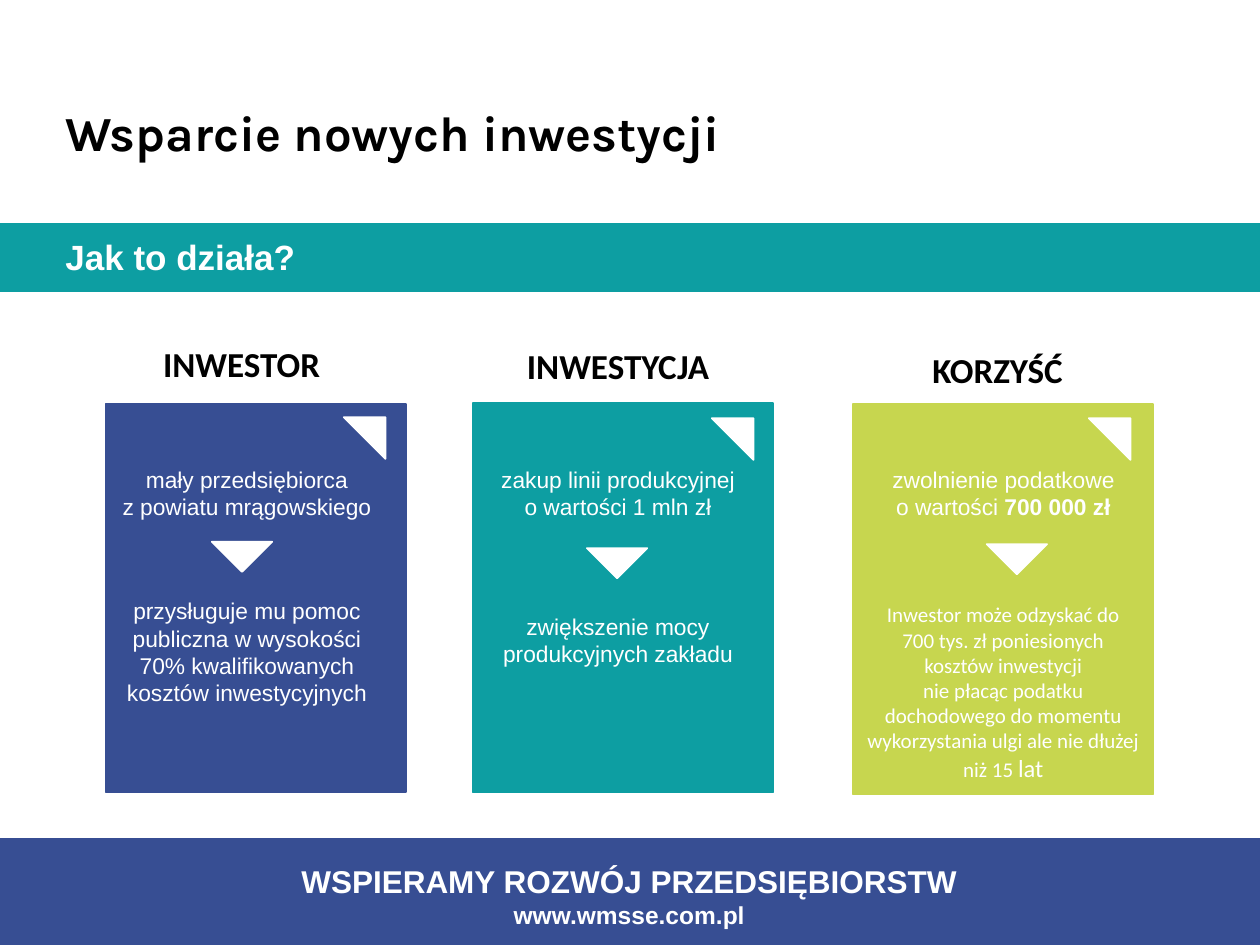
from dataclasses import dataclass

from pptx import Presentation
from pptx.dml.color import RGBColor
from pptx.enum.shapes import MSO_SHAPE
from pptx.enum.text import MSO_ANCHOR, PP_ALIGN
from pptx.util import Cm, Pt

TEAL = RGBColor(0x0D, 0x9E, 0xA2)
NAVY = RGBColor(0x37, 0x4E, 0x93)
LIME = RGBColor(0xC7, 0xD6, 0x4F)
WHITE = RGBColor(0xFF, 0xFF, 0xFF)
BLACK = RGBColor(0x00, 0x00, 0x00)

SLIDE_WIDTH, SLIDE_HEIGHT = 25.4, 19.05
PANEL_WIDTH = 6.05
HEADING_WIDTH = 7.04


@dataclass
class Column:
    heading: str
    heading_at: tuple
    colour: RGBColor
    panel_left: float
    panel_top: float
    panel_height: float
    text_left: float
    condition: list
    effect: list
    effect_top: float
    corner_at: tuple
    arrow_at: tuple
    effect_font: str = "Arial"
    effect_size: int = 13


COLUMNS = [
    Column("INWESTOR", (1.35, 6.78), NAVY, 2.13, 8.15, 7.82, 1.95,
           [["mały przedsiębiorca"], ["z powiatu mrągowskiego"]],
           [["przysługuje mu pomoc publiczna w wysokości 70% kwalifikowanych "
             "kosztów inwestycyjnych"]],
           11.91, (6.93, 8.41), (4.45, 10.49)),
    Column("INWESTYCJA", (8.94, 6.83), TEAL, 9.53, 8.13, 7.85, 9.43,
           [["zakup linii produkcyjnej"], ["o wartości 1 mln zł"]],
           [["zwiększenie mocy produkcyjnych zakładu"]],
           12.22, (14.35, 8.43), (12.01, 10.62)),
    Column("KORZYŚĆ", (16.59, 6.91), LIME, 17.2, 8.15, 7.87, 17.2,
           [["zwolnienie podatkowe"], ["o wartości ", "700 000 zł"]],
           [["Inwestor może odzyskać do"],
            ["700 tys. zł poniesionych kosztów inwestycji"],
            ["nie płacąc podatku dochodowego do momentu wykorzystania ulgi "
             "ale nie dłużej niż 15 ", "lat"]],
           12.01, (21.95, 8.43), (20.07, 10.54), "Calibri", 12),
]


class SlideBuilder:
    def __init__(self, slide):
        self.slide = slide

    def style(self, run, size, font, colour, bold=False):
        run.font.size = Pt(size)
        run.font.name = font
        run.font.bold = bold
        run.font.color.rgb = colour

    def title(self, wording, left, top, width, height):
        title = self.slide.shapes.title
        title.left, title.top = Cm(left), Cm(top)
        title.width, title.height = Cm(width), Cm(height)
        frame = title.text_frame
        frame.text = wording
        frame.vertical_anchor = MSO_ANCHOR.MIDDLE
        heading = frame.paragraphs[0]
        heading.alignment = PP_ALIGN.LEFT
        heading.line_spacing = 0.9
        self.style(heading.runs[0], 28, "Karla", BLACK, True)

    def block(self, kind, left, top, width, height, colour, rotation=0):
        block = self.slide.shapes.add_shape(
            kind, Cm(left), Cm(top), Cm(width), Cm(height))
        block.shadow.inherit = False
        block.fill.solid()
        block.fill.fore_color.rgb = colour
        block.line.color.rgb = colour
        block.line.width = Pt(1)
        block.rotation = rotation

    def text(self, lines, left, top, width, height, size, font="Arial",
             colour=WHITE, bold=False, align=PP_ALIGN.CENTER):
        frame = self.slide.shapes.add_textbox(
            Cm(left), Cm(top), Cm(width), Cm(height)).text_frame
        frame.word_wrap = True
        for index, pieces in enumerate(lines):
            line = frame.paragraphs[0] if index == 0 else frame.add_paragraph()
            line.alignment = align
            for piece in pieces:
                run = line.add_run()
                run.text = piece
                self.style(run, size, font, colour, bold)
        return frame

    def column(self, column):
        self.block(MSO_SHAPE.RECTANGLE, column.panel_left, column.panel_top,
                   PANEL_WIDTH, column.panel_height, column.colour)
        self.text([[column.heading]], *column.heading_at, HEADING_WIDTH, 1.12,
                  20, "Calibri", BLACK, True)
        condition = self.text(column.condition, column.text_left, 9.26,
                              PANEL_WIDTH, 1.3, 13)
        for emphasis in condition.paragraphs[-1].runs[1:]:
            emphasis.font.bold = True
        effect = self.text(column.effect, column.text_left, column.effect_top,
                           PANEL_WIDTH, 2.5, column.effect_size,
                           column.effect_font)
        for emphasis in effect.paragraphs[-1].runs[1:]:
            emphasis.font.size = Pt(14)
        self.block(MSO_SHAPE.RIGHT_TRIANGLE, *column.corner_at, 0.84, 0.84,
                   WHITE, 180)
        self.block(MSO_SHAPE.RIGHT_TRIANGLE, *column.arrow_at, 0.86, 0.86,
                   WHITE, 315)


def main():
    presentation = Presentation()
    presentation.slide_width = Cm(SLIDE_WIDTH)
    presentation.slide_height = Cm(SLIDE_HEIGHT)
    builder = SlideBuilder(
        presentation.slides.add_slide(presentation.slide_layouts[5]))

    builder.title("Wsparcie nowych inwestycji", 1.07, 1.09, 14.6, 3.3)
    builder.block(MSO_SHAPE.RECTANGLE, 0, 4.52, SLIDE_WIDTH, 1.35, TEAL)
    builder.text([["Jak to działa?"]], 1.07, 4.62, 6, 1.12, 20,
                 bold=True, align=PP_ALIGN.LEFT)

    for column in COLUMNS:
        builder.column(column)

    builder.block(MSO_SHAPE.RECTANGLE, 0, 16.92, SLIDE_WIDTH, 2.13, NAVY)
    footer = builder.text(
        [["WSPIERAMY ROZWÓJ PRZEDSIĘBIORSTW"], ["www.wmsse.com.pl"]],
        2.13, 17.25, 21.11, 1.63, 18, bold=True)
    footer.paragraphs[1].runs[0].font.size = Pt(14)

    presentation.save("out.pptx")


if __name__ == "__main__":
    main()
